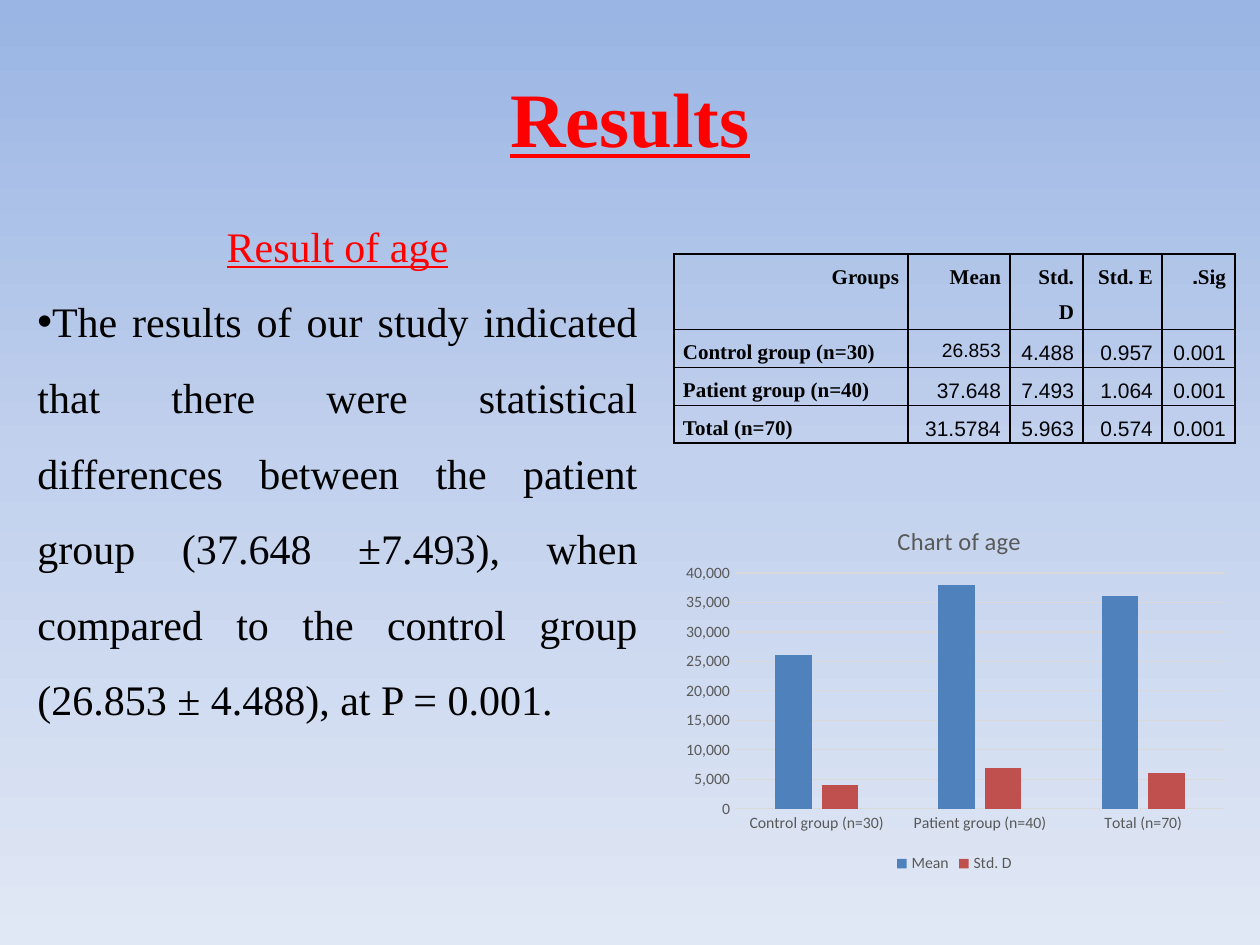
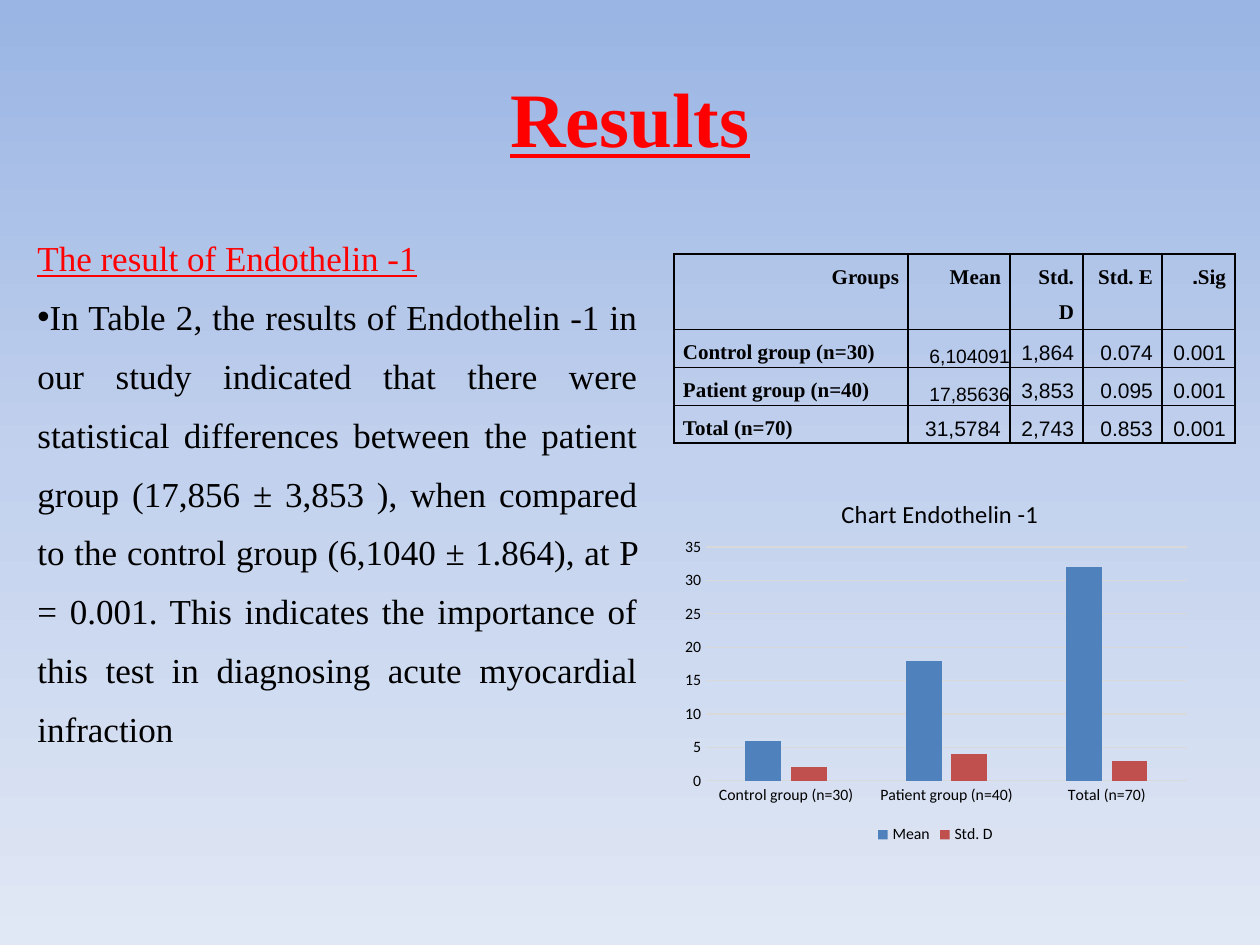
from dataclasses import dataclass

from lxml import etree
from pptx import Presentation
from pptx.chart.data import CategoryChartData
from pptx.dml.color import RGBColor
from pptx.enum.chart import XL_CHART_TYPE, XL_LEGEND_POSITION, XL_TICK_MARK
from pptx.enum.text import MSO_ANCHOR, PP_ALIGN
from pptx.oxml.ns import qn
from pptx.util import Emu, Pt

COLUMNS = XL_CHART_TYPE.COLUMN_CLUSTERED
LEGEND_BOTTOM = XL_LEGEND_POSITION.BOTTOM
NO_TICK = XL_TICK_MARK.NONE
TOP, MIDDLE, BOTTOM = MSO_ANCHOR.TOP, MSO_ANCHOR.MIDDLE, MSO_ANCHOR.BOTTOM
LEFT, CENTER, RIGHT, JUSTIFY = PP_ALIGN.LEFT, PP_ALIGN.CENTER, PP_ALIGN.RIGHT, PP_ALIGN.JUSTIFY
PX = 914400 // 126


@dataclass(frozen=True)
class Theme:
    serif: str = "Times New Roman"
    sans: str = "Calibri"
    digits: str = "Arial"
    accent: str = "FF0000"
    ink: str = "000000"
    value: str = "010205"
    grey: str = "595959"
    grid: str = "D9D9D9"
    series: tuple = ("4F81BD", "C0504D")
    background: tuple = ((0, "9AB5E4"), (50, "C2D1ED"), (100, "E1E8F5"))
    title_size: int = 44
    cell_size: int = 12
    small_size: int = 11
    chart_size: int = 10
    chart_title_size: int = 14
    label_size: int = 9


THEME = Theme()
SLIDE_SIZE = (1260, 945)
TITLE_BOX = (63, 38, 1134, 158)
TABLE_AT = (674, 254)
COLUMN_WIDTHS = (234, 102, 73, 79, 73)
ROW_HEIGHTS = (70, 35, 35, 35)
CELL_INSET = 9
HANGING = 48
HEADERS = ("Groups", "Mean", "Std. D", "Std. E", "Sig.")
GROUPS = ("Control group (n=30)", "Patient group (n=40)", "Total (n=70)")
SERIES = ("Mean", "Std. D")

RESULTS = [
    {
        "heading": "Result of age",
        "heading_align": CENTER,
        "heading_spacing": 1.0,
        "body": (
            "The results of our study indicated that there were statistical differences "
            "between the patient group (",
            "37.648", " ±", "7.493",
            "), when compared to the control group (26.853 ± ",
            "4.488", "), at P = 0.001.",
        ),
        "body_box": (25, 214, 625, 665),
        "body_size": 24,
        "body_spacing": 1.5,
        "space_after": 10,
        "table": (
            ("26.853", "4.488", "0.957", "0.001"),
            ("37.648", "7.493", "1.064", "0.001"),
            ("31.5784", "5.963", "0.574", "0.001"),
        ),
        "small_means": (1,),
        "tight_means": (),
        "chart_title": "Chart of age",
        "chart_box": (674, 500, 561, 378),
        "plot_box": (735, 573, 490, 236),
        "chart_title_at": (893, 520),
        "chart_color": THEME.grey,
        "chart_values": ((26000, 38000, 36000), (4000, 7000, 6000)),
        "axis_top": 40000,
        "axis_step": 5000,
        "axis_format": "#,##0",
    },
    {
        "heading": "The result of Endothelin -1",
        "heading_align": JUSTIFY,
        "heading_spacing": 1.4,
        "body": (
            "In Table 2, the results of Endothelin -1 in our study indicated that there were "
            "statistical differences between the patient group (17,856 ± 3,853 ), when "
            "compared to the control group (6,1040 ± ",
            "1.864",
            "), at P = 0.001. This indicates the importance of this test in diagnosing "
            "acute myocardial infraction",
        ),
        "body_box": (25, 214, 625, 536),
        "body_size": 20,
        "body_spacing": 1.4,
        "space_after": 0,
        "table": (
            ("6,104091", "1,864", "0.074", "0.001"),
            ("17,85636", "3,853", "0.095", "0.001"),
            ("31,5784", "2,743", "0.853", "0.001"),
        ),
        "small_means": (1, 2),
        "tight_means": (1, 2),
        "chart_title": "Chart Endothelin -1",
        "chart_box": (674, 471, 523, 378),
        "plot_box": (706, 547, 481, 234),
        "chart_title_at": (837, 493),
        "chart_color": THEME.ink,
        "chart_values": ((6, 18, 32), (2, 4, 3)),
        "axis_top": 35,
        "axis_step": 5,
        "axis_format": "General",
    },
]


def px(*lengths):
    return [Emu(length * PX) for length in lengths]


def style_font(font, size, color, name=THEME.serif, bold=False, underline=False):
    font.size = Pt(size)
    font.name = name
    font.bold = bold
    font.underline = underline
    font.color.rgb = RGBColor.from_string(color)


def right_to_left(paragraph):
    paragraph._p.get_or_add_pPr().set("rtl", "1")


def paint_background(master):
    fill = master.background.fill
    fill.gradient()
    fill.gradient_angle = 270
    stops = fill._fill._gradFill.find(qn("a:gsLst"))
    for stop in list(stops):
        stops.remove(stop)
    for percent, color in THEME.background:
        stop = etree.SubElement(stops, qn("a:gs"), pos=str(percent * 1000))
        etree.SubElement(stop, qn("a:srgbClr"), val=color)


def add_title(slide):
    title = slide.shapes.title
    title.left, title.top, title.width, title.height = px(*TITLE_BOX)
    title.text_frame.text = "Results"
    title.text_frame.vertical_anchor = MIDDLE
    paragraph = title.text_frame.paragraphs[0]
    paragraph.alignment = CENTER
    right_to_left(paragraph)
    style_font(paragraph.runs[0].font, THEME.title_size, THEME.accent, bold=True, underline=True)


def add_body(slide, result):
    frame = slide.shapes.add_textbox(*px(*result["body_box"])).text_frame
    frame.word_wrap = True
    frame.text = result["heading"]
    heading = frame.paragraphs[0]
    heading.alignment = result["heading_align"]
    heading.line_spacing = result["heading_spacing"]
    heading.space_before = Pt(3)
    style_font(heading.runs[0].font, result["body_size"], THEME.accent, underline=True)

    paragraph = frame.add_paragraph()
    paragraph.alignment = JUSTIFY
    paragraph.line_spacing = result["body_spacing"]
    paragraph.space_after = Pt(result["space_after"])
    properties = paragraph._p.get_or_add_pPr()
    properties.set("marL", "0")
    properties.set("indent", str(-HANGING * PX))
    etree.SubElement(properties, qn("a:buFont"), typeface=THEME.digits)
    etree.SubElement(properties, qn("a:buChar"), char="•")
    for index, text in enumerate(result["body"]):
        run = paragraph.add_run()
        run.text = text
        style_font(run.font, result["body_size"], THEME.value if index % 2 else THEME.ink)


def add_borders(cell):
    properties = cell._tc.get_or_add_tcPr()
    for index, side in enumerate(("a:lnL", "a:lnR", "a:lnT", "a:lnB")):
        line = etree.Element(qn(side), w=str(Pt(1)))
        fill = etree.SubElement(line, qn("a:solidFill"))
        etree.SubElement(fill, qn("a:srgbClr"), val=THEME.ink)
        properties.insert(index, line)


def fill_cell(cell, text, row, column, small, tight):
    is_label = row == 0 or column == 0
    cell.fill.background()
    add_borders(cell)
    cell.margin_left = cell.margin_right = px(0 if tight else CELL_INSET)[0]
    cell.margin_top = cell.margin_bottom = 0
    cell.vertical_anchor = BOTTOM if tight else TOP
    cell.text_frame.text = text
    paragraph = cell.text_frame.paragraphs[0]
    right_to_left(paragraph)
    if tight:
        paragraph.alignment = RIGHT
    else:
        paragraph.alignment = LEFT if row and column == 0 else JUSTIFY
        paragraph.line_spacing = 1.5
        paragraph.space_after = Pt(10)
    font = paragraph.runs[0].font
    color = THEME.ink if is_label or small or column == len(HEADERS) - 1 else THEME.value
    style_font(
        font,
        THEME.small_size if small else THEME.cell_size,
        color,
        THEME.sans if small else THEME.serif,
        bold=is_label,
    )
    if not is_label:
        etree.SubElement(paragraph.runs[0]._r.get_or_add_rPr(), qn("a:cs"), typeface=THEME.digits)


def add_table(slide, result):
    rows = [HEADERS] + [(group, *values) for group, values in zip(GROUPS, result["table"])]
    size = (sum(COLUMN_WIDTHS), sum(ROW_HEIGHTS))
    table = slide.shapes.add_table(len(rows), len(HEADERS), *px(*TABLE_AT, *size)).table
    table.first_row = table.horz_banding = False
    for column, width in zip(table.columns, px(*COLUMN_WIDTHS)):
        column.width = width
    for row, height in zip(table.rows, px(*ROW_HEIGHTS)):
        row.height = height
    for row, texts in enumerate(rows):
        for column, text in enumerate(texts):
            small = column == 1 and row in result["small_means"]
            tight = column == 1 and row in result["tight_means"]
            fill_cell(table.cell(row, column), text, row, column, small, tight)


def place_in_chart(element, index, chart_box, box, inner=False):
    for old_layout in element.findall(qn("c:layout")):
        element.remove(old_layout)
    layout = etree.Element(qn("c:layout"))
    manual = etree.SubElement(layout, qn("c:manualLayout"))
    if inner:
        etree.SubElement(manual, qn("c:layoutTarget"), val="inner")
    for mode in ("c:xMode", "c:yMode"):
        etree.SubElement(manual, qn(mode), val="edge")
    left, top, width, height = chart_box
    offsets = (box[0] - left, box[1] - top, *box[2:])
    for name, offset, whole in zip("xywh", offsets, (width, height, width, height)):
        etree.SubElement(manual, qn("c:" + name), val=str(round(offset / whole, 4)))
    element.insert(index, layout)


def add_chart(slide, result):
    data = CategoryChartData(number_format=result["axis_format"])
    data.categories = GROUPS
    for name, values in zip(SERIES, result["chart_values"]):
        data.add_series(name, values)
    chart_box, color = result["chart_box"], result["chart_color"]
    chart = slide.shapes.add_chart(COLUMNS, *px(*chart_box), data).chart
    style_font(chart.font, THEME.chart_size, THEME.ink, THEME.sans)

    chart.has_title = True
    title = chart.chart_title
    title.text_frame.text = result["chart_title"]
    title_run = title.text_frame.paragraphs[0].runs[0]
    style_font(title_run.font, THEME.chart_title_size, color, THEME.sans)
    title.include_in_layout = False
    place_in_chart(title.element, 1, chart_box, result["chart_title_at"])
    plot_area = chart.element.find(".//" + qn("c:plotArea"))
    place_in_chart(plot_area, 0, chart_box, result["plot_box"], inner=True)

    chart.has_legend = True
    chart.legend.position = LEGEND_BOTTOM
    chart.legend.include_in_layout = False
    plot = chart.plots[0]
    plot.gap_width, plot.overlap = 219, -27
    plot.vary_by_categories = False
    for series, series_color in zip(plot.series, THEME.series):
        series.format.fill.solid()
        series.format.fill.fore_color.rgb = RGBColor.from_string(series_color)

    category_axis, value_axis = chart.category_axis, chart.value_axis
    for part in (category_axis.tick_labels, value_axis.tick_labels, chart.legend):
        style_font(part.font, THEME.label_size, color, THEME.sans)
    for axis in (category_axis, value_axis):
        axis.major_tick_mark = axis.minor_tick_mark = NO_TICK
    value_axis.minimum_scale = 0
    value_axis.maximum_scale = result["axis_top"]
    value_axis.major_unit = result["axis_step"]
    value_axis.tick_labels.number_format = result["axis_format"]
    value_axis.tick_labels.number_format_is_linked = False
    value_axis.format.line.fill.background()
    for line in (category_axis.format.line, value_axis.major_gridlines.format.line):
        line.width = Pt(0.75)
        line.color.rgb = RGBColor.from_string(THEME.grid)


def main():
    presentation = Presentation()
    presentation.slide_width, presentation.slide_height = px(*SLIDE_SIZE)
    paint_background(presentation.slide_master)
    for result in RESULTS:
        slide = presentation.slides.add_slide(presentation.slide_layouts[5])
        add_title(slide)
        add_body(slide, result)
        add_table(slide, result)
        add_chart(slide, result)
    presentation.save("out.pptx")


if __name__ == "__main__":
    main()
